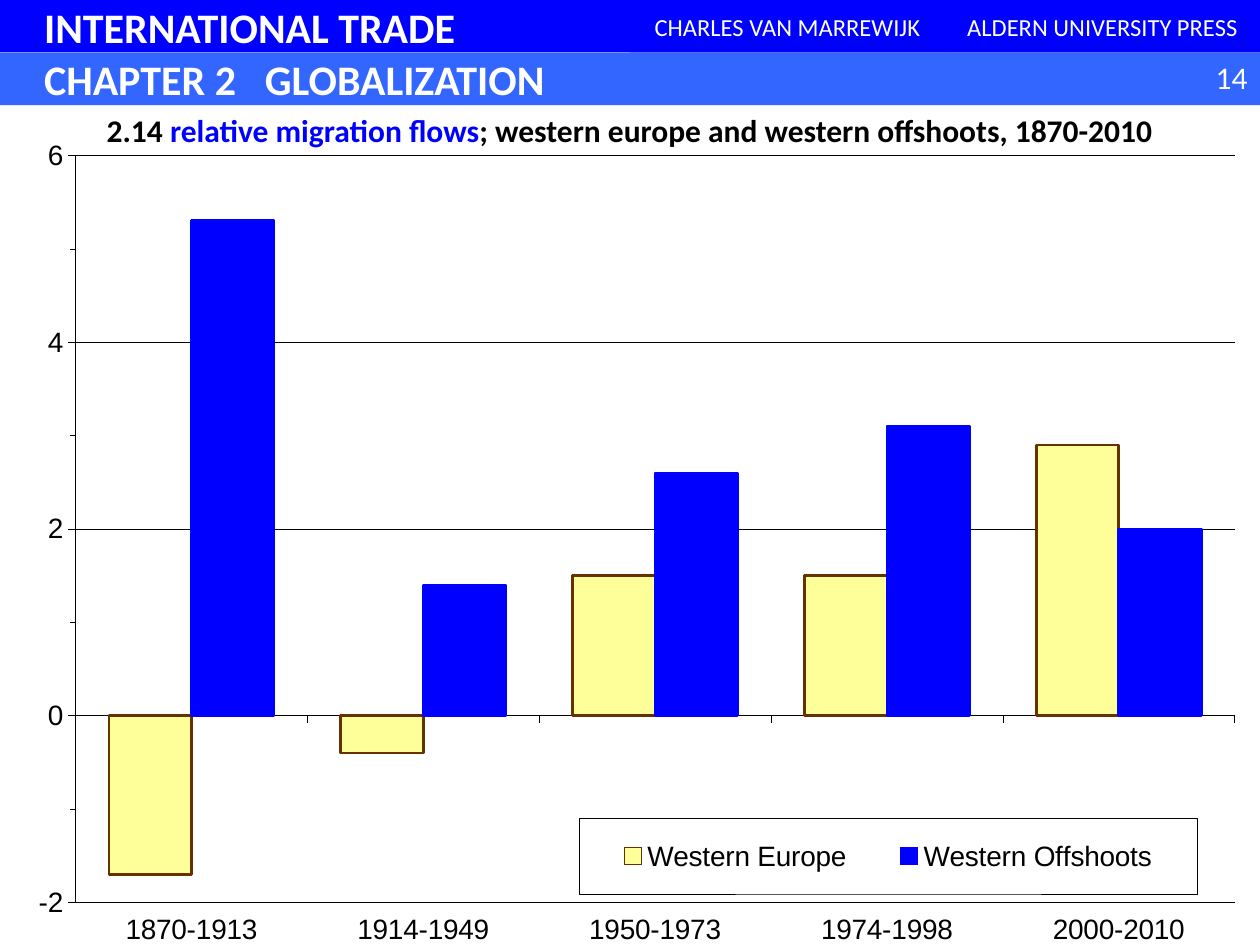
from lxml import etree
from pptx import Presentation
from pptx.chart.data import CategoryChartData
from pptx.dml.color import RGBColor
from pptx.enum.chart import (XL_CHART_TYPE, XL_LEGEND_POSITION,
                             XL_TICK_LABEL_POSITION, XL_TICK_MARK)
from pptx.enum.dml import MSO_LINE
from pptx.enum.shapes import MSO_SHAPE
from pptx.enum.text import MSO_ANCHOR, PP_ALIGN
from pptx.oxml import parse_xml
from pptx.oxml.ns import nsdecls, qn
from pptx.util import Cm, Pt

WHITE = RGBColor(0xFF, 0xFF, 0xFF)
BLACK = RGBColor(0, 0, 0)
BLUE = RGBColor(0, 0, 0xFF)
LIGHT_BLUE = RGBColor(0x33, 0x66, 0xFF)
YELLOW = RGBColor(0xFF, 0xFF, 0x99)
BROWN = RGBColor(0x66, 0x33, 0)

COLUMNS = XL_CHART_TYPE.COLUMN_CLUSTERED
LEGEND_RIGHT = XL_LEGEND_POSITION.RIGHT
LABELS_LOW = XL_TICK_LABEL_POSITION.LOW
OUTSIDE = XL_TICK_MARK.OUTSIDE
DOTTED = MSO_LINE.ROUND_DOT
RECTANGLE = MSO_SHAPE.RECTANGLE
MIDDLE = MSO_ANCHOR.MIDDLE
LEFT, CENTER, RIGHT = PP_ALIGN.LEFT, PP_ALIGN.CENTER, PP_ALIGN.RIGHT

PAGE_WIDTH, PAGE_HEIGHT = Cm(25.4), Cm(19.05)
BAND_HEIGHT = Cm(1.06)
TITLE_INDENT = Cm(0.89)
TITLE_TAB = Cm(4.45)

PERIODS = ["1870-1913", "1914-1949", "1950-1973", "1974-1998", "2000-2010"]
FLOWS = [
    ("Western Europe", [-1.7, -0.4, 1.5, 1.5, 2.9], YELLOW, BROWN),
    ("Western Offshoots", [5.3, 1.4, 2.6, 3.1, 2], BLUE, BLUE),
]


def add_span(para, text, size=18, color=WHITE, bold=False):
    span = para.add_run()
    span.text = text
    span.font.name = "Calibri"
    span.font.size = Pt(size)
    span.font.bold = bold
    span.font.color.rgb = color


def add_band(page, box, fill, text, align=LEFT, **text_format):
    band = page.shapes.add_shape(RECTANGLE, *box)
    band.shadow.inherit = False
    band.fill.solid()
    band.fill.fore_color.rgb = fill
    band.line.fill.background()
    frame = band.text_frame
    frame.vertical_anchor = MIDDLE
    para = frame.paragraphs[0]
    para.alignment = align
    if align == LEFT:
        frame.margin_left = TITLE_INDENT
        tabs = etree.SubElement(para._p.get_or_add_pPr(), qn("a:tabLst"))
        etree.SubElement(tabs, qn("a:tab"), pos=str(TITLE_TAB), algn="l")
    add_span(para, text, **text_format)


def add_label(page, box, spans, align=LEFT):
    """Add a text box from (text, format) pairs."""
    label = page.shapes.add_textbox(*box)
    label.text_frame.word_wrap = True
    para = label.text_frame.paragraphs[0]
    para.alignment = align
    for text, text_format in spans:
        add_span(para, text, **text_format)


def add_header(page, left, top, width):
    quarter = width // 4
    second_top = top + BAND_HEIGHT
    add_band(page, (left, top, width, BAND_HEIGHT), BLUE,
             "INTERNATIONAL TRADE", size=24, bold=True)
    credits = ["CHARLES VAN MARREWIJK", "ALDERN UNIVERSITY PRESS"]
    for column, text in enumerate(credits, start=2):
        add_band(page, (left + column * quarter, top, quarter, BAND_HEIGHT),
                 BLUE, text, align=CENTER, size=14)
    add_band(page, (left, second_top, width, BAND_HEIGHT), LIGHT_BLUE,
             "CHAPTER 2\tGLOBALIZATION", size=24, bold=True)
    number_width = Cm(1.7)
    add_label(page, (left + width - number_width, second_top - Cm(0.02),
                     number_width, Cm(1.02)), [("14", {})], align=RIGHT)


def set_layout(element, index, x, y, w, h, inner=False):
    """Place a chart part by fractions of the chart's size."""
    for old in element.findall(qn("c:layout")):
        element.remove(old)
    target = '<c:layoutTarget val="inner"/>' if inner else ""
    sizes = "".join(f'<c:{name} val="{value}"/>' for name, value in
                    zip("xywh", (x, y, w, h)))
    element.insert(index, parse_xml(
        f'<c:layout {nsdecls("c")}><c:manualLayout>{target}'
        f'<c:xMode val="edge"/><c:yMode val="edge"/>{sizes}'
        '</c:manualLayout></c:layout>'))


def style_font(font, size):
    font.name = "Arial"
    font.size = Pt(size)
    font.color.rgb = BLACK


def style_line(line, color, width):
    line.color.rgb = color
    line.width = Pt(width)


def style_axes(chart):
    for axis in (chart.category_axis, chart.value_axis):
        axis.major_tick_mark = OUTSIDE
        style_font(axis.tick_labels.font, 16)
        style_line(axis.format.line, BLACK, 0.25)
    # Low labels stay clear of the negative columns.
    chart.category_axis.tick_label_position = LABELS_LOW
    values = chart.value_axis
    values.minimum_scale, values.maximum_scale = -2, 6
    values.major_unit, values.minor_unit = 2, 1
    values.minor_tick_mark = OUTSIDE
    values.tick_labels.number_format = "0"
    values.tick_labels.number_format_is_linked = False
    grid = values.major_gridlines.format.line
    style_line(grid, BLACK, 0.25)
    grid.dash_style = DOTTED


def add_legend(chart):
    chart.has_legend = True
    legend = chart.legend
    legend.position = LEGEND_RIGHT
    legend.include_in_layout = False
    style_font(legend.font, 16)
    set_layout(legend._element, 1, 0.46, 0.85, 0.49, 0.09)
    legend._element.find(qn("c:overlay")).addnext(parse_xml(
        f'<c:spPr {nsdecls("c", "a")}>'
        f'<a:solidFill><a:srgbClr val="{WHITE}"/></a:solidFill>'
        f'<a:ln w="{Pt(0.25)}"><a:solidFill><a:srgbClr val="{BLACK}"/>'
        '</a:solidFill></a:ln></c:spPr>'))


def add_flow_chart(page, left, top, width, height):
    data = CategoryChartData()
    data.categories = PERIODS
    for name, values, _, _ in FLOWS:
        data.add_series(name, values)
    chart = page.shapes.add_chart(COLUMNS, left, top, width, height, data).chart
    chart.has_title = False
    style_font(chart.font, 10)
    plot = chart.plots[0]
    plot.gap_width, plot.overlap = 81, 0
    plot.vary_by_categories = False
    for series, (_, _, fill, outline) in zip(plot.series, FLOWS):
        series.invert_if_negative = False
        series.format.fill.solid()
        series.format.fill.fore_color.rgb = fill
        style_line(series.format.line, outline, 1.5)
    style_axes(chart)
    add_legend(chart)
    plot_area = chart._chartSpace.chart.plotArea
    set_layout(plot_area, 0, 0.06, 0.06, 0.92, 0.89, inner=True)


def add_figure(page, left, top, width, height):
    add_flow_chart(page, left, top, width, height)
    add_label(page, (left + Cm(1.9), top, Cm(22.43), Cm(1.02)), [
        ("2.14 ", {"color": BLACK, "bold": True}),
        ("relative migration flows", {"color": BLUE, "bold": True}),
        ("; western europe and western offshoots, 1870-2010",
         {"color": BLACK, "bold": True}),
    ])


def main():
    deck = Presentation()
    deck.slide_width, deck.slide_height = PAGE_WIDTH, PAGE_HEIGHT
    page = deck.slides.add_slide(deck.slide_layouts[6])
    add_header(page, 0, 0, PAGE_WIDTH)
    figure_top = 2 * BAND_HEIGHT
    add_figure(page, 0, figure_top, PAGE_WIDTH, PAGE_HEIGHT - figure_top)
    deck.save("out.pptx")


if __name__ == "__main__":
    main()
